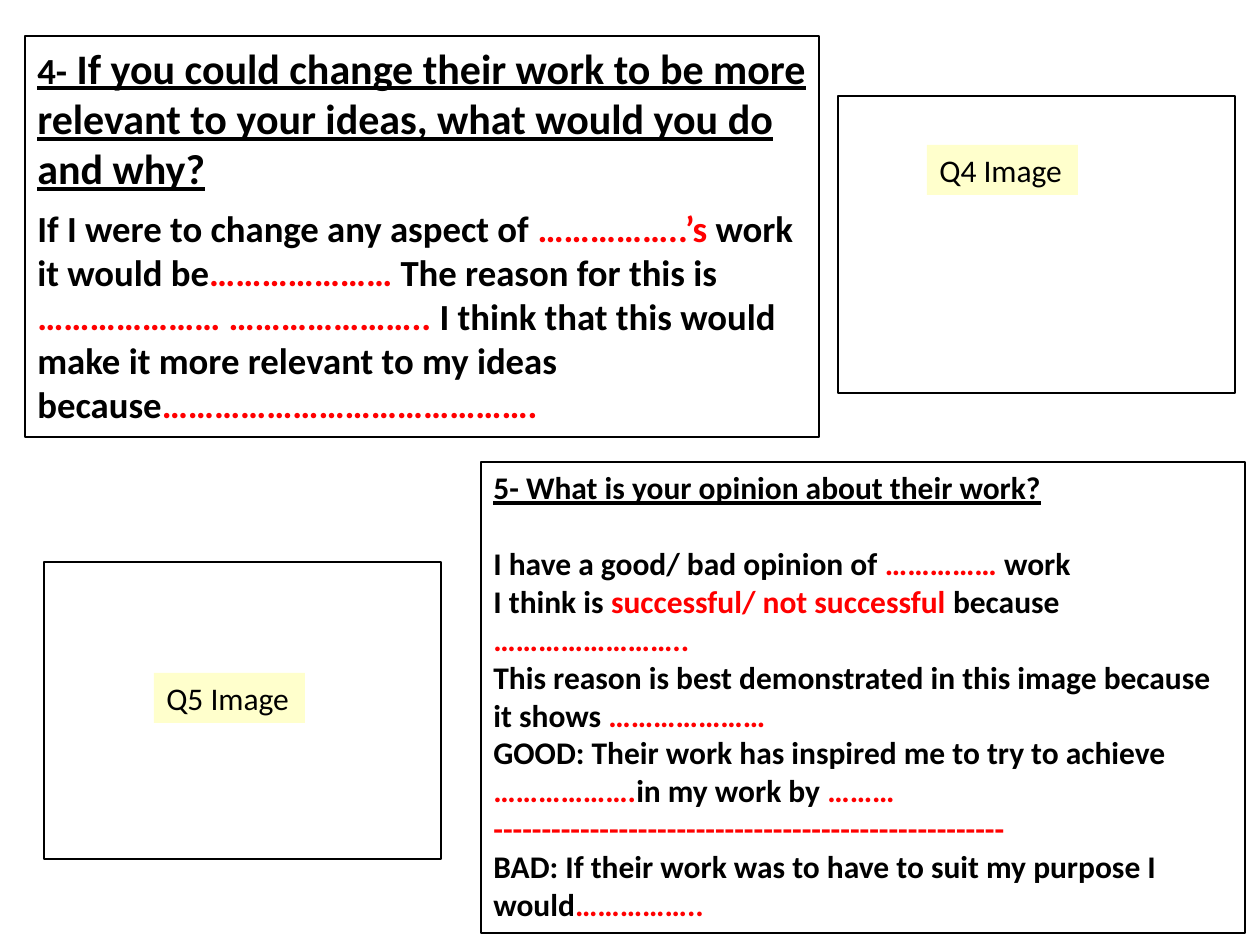
import pptx
import pptx.util
import pptx.dml.color
import pptx.enum.shapes
import pptx.enum.text

PX = 914400 / 126
THEME = {
    "font": "Calibri",
    "ink": "000000",
    "prompt": "FF0000",
    "paper": "FFFFFF",
    "label": "FFFFCC",
    "line": 0.75,
    "heading": 24,
    "question": 21,
    "body": 18,
}


def color(name):
    return pptx.dml.color.RGBColor.from_string(THEME[name])


def add_box(left, top, width, height, fill=None, outlined=True):
    box = slide.shapes.add_shape(
        pptx.enum.shapes.MSO_SHAPE.RECTANGLE,
        *(round(length * PX) for length in (left, top, width, height)))
    box.shadow.inherit = False
    if fill:
        box.fill.solid()
        box.fill.fore_color.rgb = color(fill)
    else:
        box.fill.background()
    if outlined:
        box.line.color.rgb = color("ink")
        box.line.width = pptx.util.Pt(THEME["line"])
    else:
        box.line.fill.background()
    box.text_frame.vertical_anchor = pptx.enum.text.MSO_ANCHOR.TOP
    return box


def add_span(para, text, size="body", ink="ink", bold=True, underline=False):
    para.alignment = pptx.enum.text.PP_ALIGN.LEFT
    span = para.add_run()
    span.text = text
    span.font.name = THEME["font"]
    span.font.size = pptx.util.Pt(THEME[size])
    span.font.color.rgb = color(ink)
    span.font.bold = bold
    span.font.underline = underline


deck = pptx.Presentation()
deck.slide_width = pptx.util.Inches(10)
deck.slide_height = pptx.util.Inches(7.5)
slide = deck.slides.add_slide(deck.slide_layouts[6])

questions = [
    {
        "place": (481, 462, 764, 471),
        "title": [("5- What is your opinion about their work?", "body")],
        "size": "body",
        "gap": 22,
        "answers": [
            [("I have a good/ bad opinion of ", "ink"), ("……………", "prompt"), (" work", "ink")],
            [("I think is ", "ink"), ("successful/ not successful ", "prompt"),
             ("because ", "ink"), ("……………………..", "prompt")],
            [("This reason is best demonstrated in this image because it shows ", "ink"),
             ("…………………", "prompt")],
            [("GOOD: Their work has inspired me to try to achieve ", "ink"),
             ("……………….", "prompt"), ("in my work by ", "ink"), ("………", "prompt")],
            [("-----------------------------------------------------", "prompt")],
            [("BAD: If their work was to have to suit my purpose I would", "ink"),
             ("……………..", "prompt")],
        ],
    },
    {
        "place": (25, 36, 794, 401),
        "title": [
            ("4-", "question"),
            (" If you could change their work to be more relevant to your ideas, "
             "what would you do and why?", "heading"),
        ],
        "size": "question",
        "gap": 7,
        "answers": [
            [("If I were to change any aspect of ", "ink"), ("……………..’s ", "prompt"),
             ("work it would be", "ink"), ("…………………", "prompt"),
             (" The reason for this is ", "ink"), ("………………… ………………….. ", "prompt"),
             ("I think that this would make it more relevant to my ideas because", "ink"),
             ("…………………………………….", "prompt")],
        ],
    },
]

for question in questions:
    frame = add_box(*question["place"], fill="paper").text_frame
    frame.word_wrap = True
    title = frame.paragraphs[0]
    title.space_after = pptx.util.Pt(question["gap"])
    for text, size in question["title"]:
        add_span(title, text, size=size, underline=True)
    for answer in question["answers"]:
        para = frame.add_paragraph()
        for text, ink in answer:
            add_span(para, text, size=question["size"], ink=ink)

for left, top in [(838, 96), (44, 562)]:
    add_box(left, top, 397, 297)

for text, left, top in [("Q4 Image", 927, 145), ("Q5 Image", 154, 673)]:
    label = add_box(left, top, 151, 50, fill="label", outlined=False)
    label.text_frame.word_wrap = True
    add_span(label.text_frame.paragraphs[0], text, bold=False)

deck.save("out.pptx")
